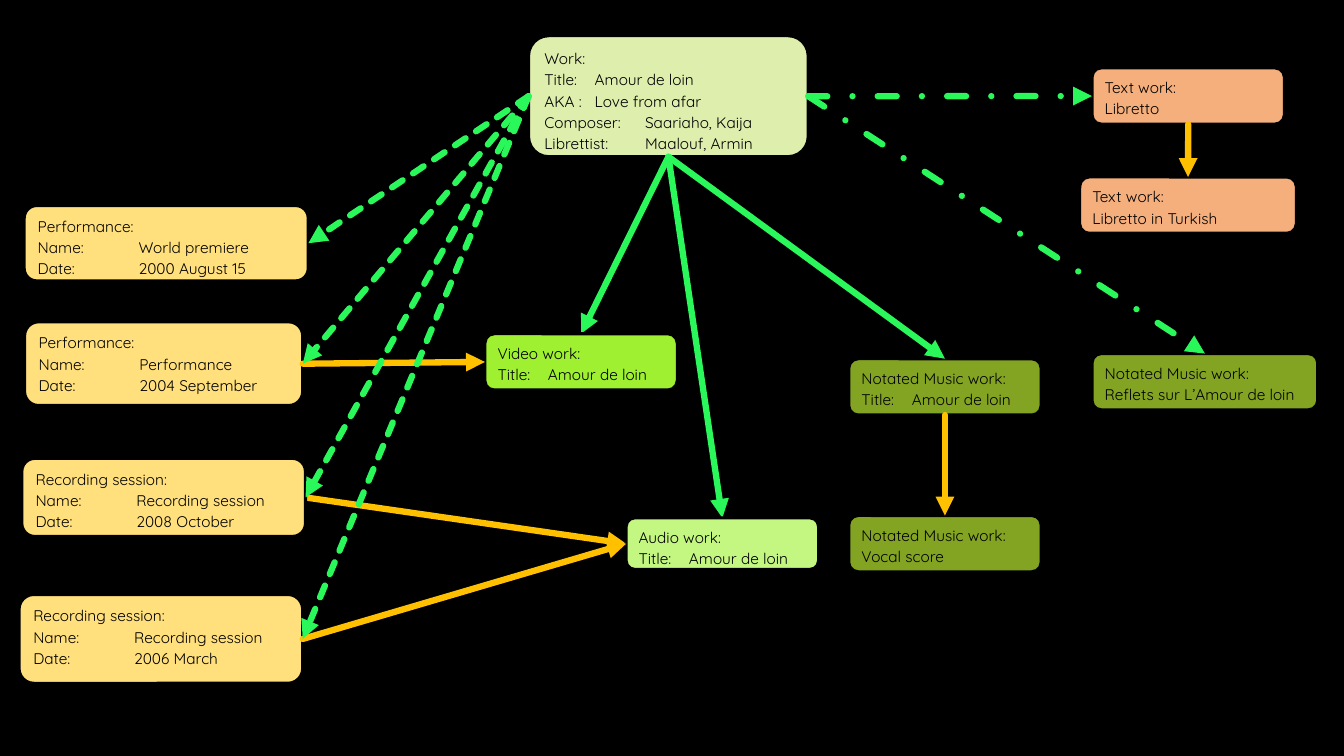
from lxml import etree
from pptx import Presentation
from pptx import util as u
from pptx.dml.color import RGBColor
from pptx.enum import dml, shapes, text
from pptx.oxml import ns

HUES = {
    "black": "000000", "work": "DEEEAD", "event": "FFE07D", "video": "9EF030",
    "audio": "C4F682", "score": "83A322", "text": "F5AF7C",
    "gold": "FFC000", "green": "29F75A",
}
TOP, LEFT, BASE, RIGHT = range(4)
NEAR, FAR = 1.27, 2.54
DASH = dml.MSO_LINE.SQUARE_DOT
DOT = dml.MSO_LINE.DASH_DOT

BOXES = [
    ("work", "work", 13.32, 0.9, 7.05, 3.05, [
        "Work:", "Title:\tAmour de loin", "AKA :\tLove from afar",
        "Composer:\tSaariaho, Kaija", "Librettist:\tMaalouf, Armin"]),
    ("music", "score", 21.39, 9.04, 4.85, 1.42,
        ["Notated Music work:", "Title:\tAmour de loin"]),
    ("vocal", "score", 21.39, 12.99, 4.85, 1.42,
        ["Notated Music work:", "Vocal score"]),
    ("video", "video", 12.22, 8.41, 4.85, 1.42,
        ["Video work:", "Title:\tAmour de loin"]),
    ("show", "event", 0.62, 8.11, 7.01, 2.11,
        ["Performance:", "Name:\tPerformance", "Date:\t2004 September"]),
    ("late", "event", 0.55, 11.55, 7.15, 1.97,
        ["Recording session:", "Name:\tRecording session", "Date:\t2008 October"]),
    ("debut", "event", 0.61, 5.18, 7.16, 1.9,
        ["Performance:", "Name:\tWorld premiere", "Date:\t2000 August 15"]),
    ("early", "event", 0.48, 14.98, 7.15, 2.24,
        ["Recording session:", "Name:\tRecording session", "Date:\t2006 March"]),
    ("audio", "audio", 15.78, 13.05, 4.85, 1.3,
        ["Audio work:", "Title:\tAmour de loin"]),
    ("words", "text", 27.52, 1.71, 4.85, 1.42, ["Text work:", "Libretto"]),
    ("turkish", "text", 27.21, 4.46, 5.46, 1.42,
        ["Text work:", "Libretto in Turkish"]),
    ("reflets", "score", 27.52, 8.91, 5.69, 1.42,
        ["Notated Music work:", "Reflets sur L’Amour de loin"]),
]

UNDER = [
    ("late", RIGHT, "audio", LEFT, "gold", None),
    ("work", BASE, "audio", TOP, "green", None),
    ("work", BASE, "video", TOP, "green", None),
]
OVER = [
    ("music", BASE, "vocal", TOP, "gold", None),
    ("work", BASE, "music", TOP, "green", None),
    ("show", RIGHT, "video", LEFT, "gold", None),
    ("early", RIGHT, "audio", LEFT, "gold", None),
    ("words", BASE, "turkish", TOP, "gold", None),
    ("work", RIGHT, "words", LEFT, "green", DOT),
    ("work", RIGHT, "reflets", TOP, "green", DOT),
] + [("work", LEFT, name, RIGHT, "green", DASH)
     for name in ("debut", "show", "late", "early")]


def hue(name):
    return RGBColor.from_string(HUES[name])


class Chart:
    font = "Quicksand"
    size = u.Pt(11)

    def __init__(self, deck):
        self.slide = deck.slides.add_slide(deck.slide_layouts[6])
        back = self.slide.background.fill
        back.solid()
        back.fore_color.rgb = hue("black")
        self.nodes = {}

    def box(self, name, tint, x, y, w, h, lines):
        node = self.slide.shapes.add_shape(
            shapes.MSO_SHAPE.ROUNDED_RECTANGLE,
            u.Cm(x), u.Cm(y), u.Cm(w), u.Cm(h))
        node.shadow.inherit = False
        node.fill.solid()
        node.fill.fore_color.rgb = hue(tint)
        node.line.color.rgb = hue("black")
        node.line.width = u.Pt(2.25)
        frame = node.text_frame
        frame.word_wrap = True
        frame.vertical_anchor = text.MSO_ANCHOR.TOP
        frame.text = "\n".join(lines)
        for para in frame.paragraphs:
            self.style(para)
        self.nodes[name] = node

    def style(self, para):
        para.alignment = text.PP_ALIGN.LEFT
        para.line_spacing = 1.15
        label, tab, _ = para.text.partition("\t")
        if tab:
            short = label == "Title:" or label.startswith("AKA")
            stops = etree.SubElement(para._p.get_or_add_pPr(), ns.qn("a:tabLst"))
            etree.SubElement(stops, ns.qn("a:tab"), algn="l",
                             pos=str(u.Cm(NEAR if short else FAR)))
        for run in para.runs:
            run.font.name = self.font
            run.font.size = self.size
            run.font.color.rgb = hue("black")

    def link(self, start, exit, end, entry, tint, dash, under=False):
        arrow = self.slide.shapes.add_connector(
            shapes.MSO_CONNECTOR.STRAIGHT, 0, 0, 0, 0)
        arrow.begin_connect(self.nodes[start], exit)
        arrow.end_connect(self.nodes[end], entry)
        arrow.line.color.rgb = hue(tint)
        arrow.line.width = u.Pt(4.5)
        if dash:
            arrow.line.dash_style = dash
        props = arrow._element.spPr
        edge = props.find(ns.qn("a:ln"))
        edge.set("cap", "rnd")
        etree.SubElement(edge, ns.qn("a:round"))
        etree.SubElement(edge, ns.qn("a:tailEnd"), type="triangle")
        etree.SubElement(props, ns.qn("a:effectLst"))
        if under:
            self.nodes["work"]._element.addnext(arrow._element)


def main():
    deck = Presentation()
    deck.slide_width, deck.slide_height = u.Cm(33.87), u.Cm(19.05)
    chart = Chart(deck)
    for box in BOXES:
        chart.box(*box)
    for link in UNDER:
        chart.link(*link, under=True)
    for link in OVER:
        chart.link(*link)
    deck.save("out.pptx")


if __name__ == "__main__":
    main()
